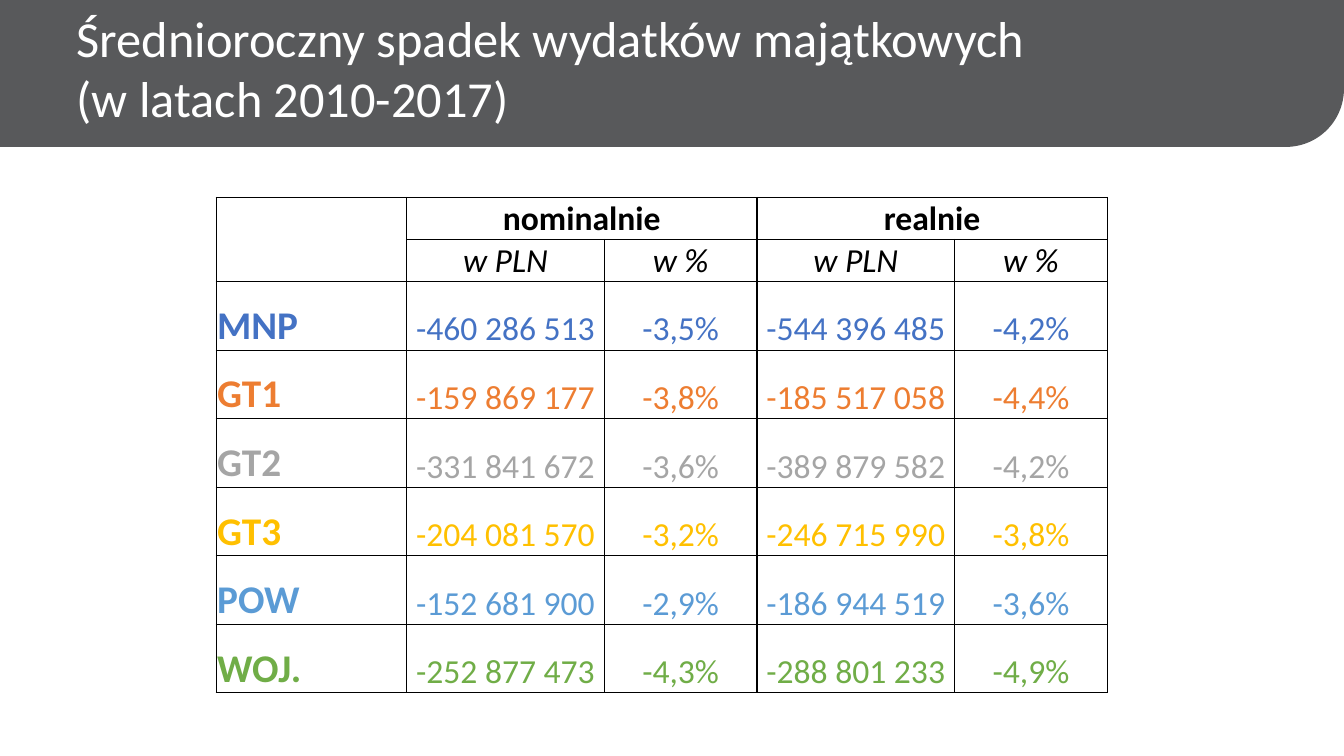
from lxml import etree
from pptx import Presentation
from pptx.dml.color import RGBColor
from pptx.enum.shapes import MSO_SHAPE
from pptx.enum.text import MSO_ANCHOR, PP_ALIGN
from pptx.oxml.ns import qn
from pptx.util import Pt

BAND = MSO_SHAPE.ROUND_1_RECTANGLE
TOP, BOTTOM = MSO_ANCHOR.TOP, MSO_ANCHOR.BOTTOM
LEFT, CENTER = PP_ALIGN.LEFT, PP_ALIGN.CENTER
FONT = "Calibri"
COLORS = {
    "band": "58595B", "white": "FFFFFF", "black": "000000",
    "MNP": "4472C4", "GT1": "ED7D31", "GT2": "A5A5A5",
    "GT3": "FFC000", "POW": "5B9BD5", "WOJ.": "70AD47",
}
TITLE = "Średnioroczny spadek wydatków majątkowych\n(w latach 2010-2017)"
HEADS = [
    ["", "nominalnie", "", "realnie", ""],
    ["", "w PLN", "w %", "w PLN", "w %"],
]
DATA = [
    ["MNP", "-460 286 513", "-3,5%", "-544 396 485", "-4,2%"],
    ["GT1", "-159 869 177", "-3,8%", "-185 517 058", "-4,4%"],
    ["GT2", "-331 841 672", "-3,6%", "-389 879 582", "-4,2%"],
    ["GT3", "-204 081 570", "-3,2%", "-246 715 990", "-3,8%"],
    ["POW", "-152 681 900", "-2,9%", "-186 944 519", "-3,6%"],
    ["WOJ.", "-252 877 473", "-4,3%", "-288 801 233", "-4,9%"],
]
WIDTHS = [136, 141.25, 109, 141.25, 109]
HEIGHTS = [27.4] * len(HEADS) + [49] * len(DATA)


def paint(name):
    return RGBColor.from_string(COLORS[name])


def style(para, size, color, align, bold=False, italic=False):
    para.alignment = align
    font = para.font
    font.name, font.size = FONT, Pt(size)
    font.bold, font.italic = bold, italic
    font.color.rgb = paint(color)


def add_band(slide):
    band = slide.shapes.add_shape(BAND, 0, 0, Pt(960), Pt(105))
    band.adjustments[0] = 0.395
    band.shadow.inherit = False
    band.fill.solid()
    band.fill.fore_color.rgb = paint("band")
    band.line.fill.background()
    band._element.spPr.find(qn("a:xfrm")).set("flipV", "1")
    slide.shapes._spTree.insert(2, band._element)


def set_title(slide):
    title = slide.shapes.title
    title.left, title.top = Pt(47.5), Pt(0)
    title.width, title.height = Pt(847), Pt(87)
    frame = title.text_frame
    frame.text = TITLE
    frame.word_wrap = True
    frame.vertical_anchor = TOP
    frame.margin_top = Pt(5)
    for para in frame.paragraphs:
        style(para, 36, "white", LEFT)


def flat_width(edge, col):
    strong = edge in (0, len(HEIGHTS)) or (edge in (1, 2) and col > 0)
    return 1 if strong else 0.5


def side_width(edge, row):
    return 0.5 if edge in (2, 4) and row > 0 else 1


def add_border(cell, side, width):
    props = cell._tc.get_or_add_tcPr()
    line = etree.SubElement(props, qn("a:ln" + side), w=str(Pt(width)))
    fill = etree.SubElement(line, qn("a:solidFill"))
    etree.SubElement(fill, qn("a:srgbClr"), val=COLORS["black"])


def fill_cell(cell, text, row, col):
    cell.margin_left = cell.margin_right = cell.margin_top = Pt(0.7)
    cell.margin_bottom = 0
    cell.vertical_anchor = BOTTOM
    add_border(cell, "L", side_width(col, row))
    add_border(cell, "R", side_width(col + 1, row))
    add_border(cell, "T", flat_width(row, col))
    add_border(cell, "B", flat_width(row + 1, col))
    cell.fill.background()
    cell.text = text
    para = cell.text_frame.paragraphs[0]
    if row < len(HEADS):
        style(para, 24, "black", CENTER, bold=row == 0, italic=row == 1)
    else:
        name = DATA[row - len(HEADS)][0]
        if col == 0:
            style(para, 28, name, LEFT, bold=True)
        else:
            style(para, 24, name, CENTER)


def add_grid(slide):
    texts = HEADS + DATA
    frame = slide.shapes.add_table(
        len(texts), len(WIDTHS), Pt(154.5), Pt(141),
        Pt(sum(WIDTHS)), Pt(sum(HEIGHTS)))
    table = frame.table
    table.first_row = table.horz_banding = False
    for column, width in zip(table.columns, WIDTHS):
        column.width = Pt(width)
    for line, height in zip(table.rows, HEIGHTS):
        line.height = Pt(height)
    for row, line in enumerate(texts):
        for col, text in enumerate(line):
            fill_cell(table.cell(row, col), text, row, col)
    table.cell(0, 0).merge(table.cell(1, 0))
    for col in (1, 3):
        table.cell(0, col).merge(table.cell(0, col + 1))


def main():
    deck = Presentation()
    deck.slide_width, deck.slide_height = Pt(960), Pt(540)
    slide = deck.slides.add_slide(deck.slide_layouts[5])
    add_band(slide)
    set_title(slide)
    add_grid(slide)
    deck.save("out.pptx")


if __name__ == "__main__":
    main()
